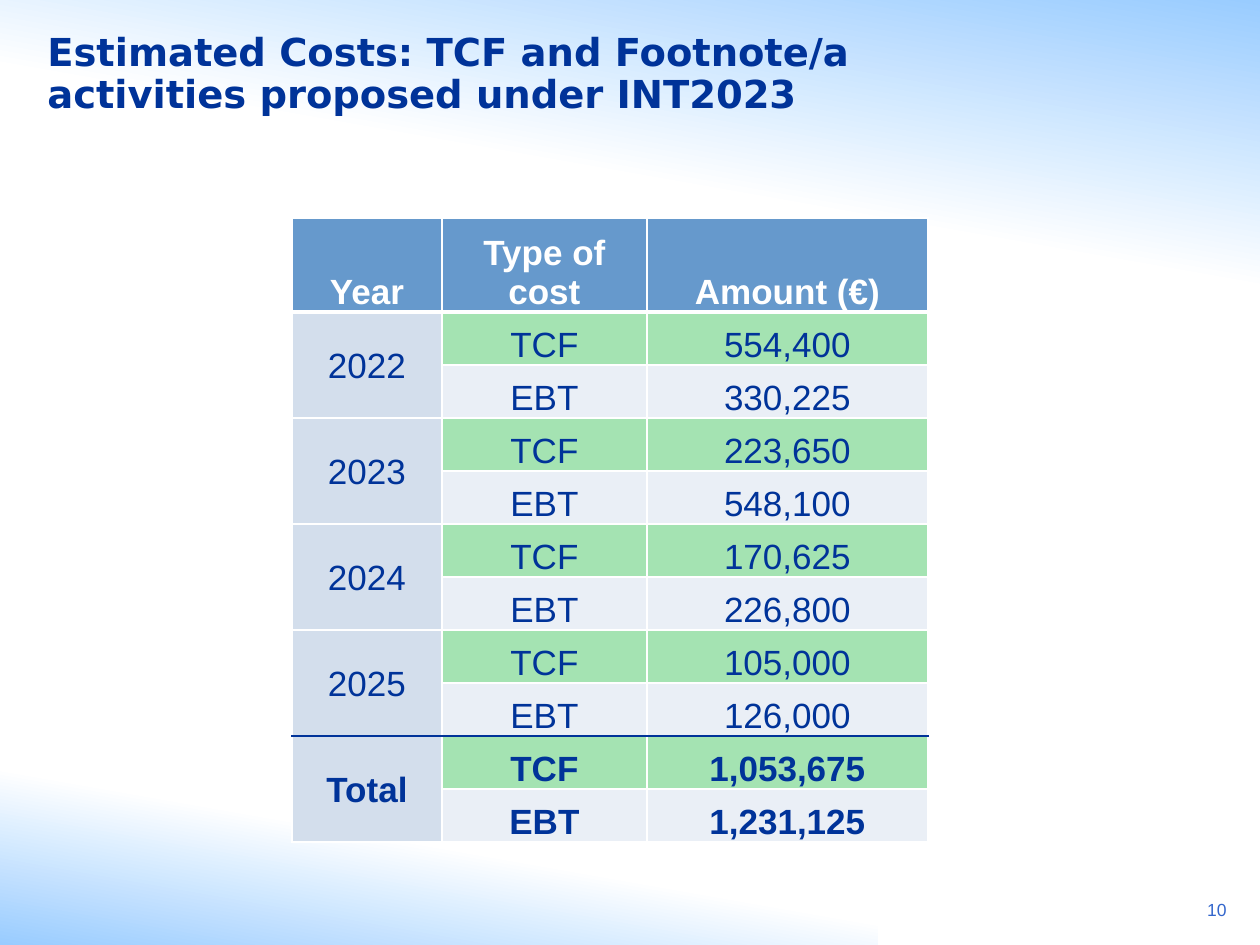
from lxml import etree
from pptx import Presentation
from pptx import util as u
from pptx.dml.color import RGBColor
from pptx.enum import shapes, text
from pptx.oxml.ns import qn

PX = 914400 / 126
WHITE = RGBColor(0xFF, 0xFF, 0xFF)
SKY = RGBColor(0x99, 0xCC, 0xFF)
NAVY = RGBColor(0x00, 0x33, 0x99)
BLUE = RGBColor(0x33, 0x66, 0xCC)
HEADER = RGBColor(0x66, 0x99, 0xCC)
YEAR = RGBColor(0xD3, 0xDE, 0xEC)
GREEN = RGBColor(0xA4, 0xE3, 0xB2)
PALE = RGBColor(0xEA, 0xEF, 0xF6)

HEADINGS = ["Year", "Type of cost", "Amount (€)"]
COSTS = [
    ("2022", "554,400", "330,225"),
    ("2023", "223,650", "548,100"),
    ("2024", "170,625", "226,800"),
    ("2025", "105,000", "126,000"),
    ("Total", "1,053,675", "1,231,125"),
]
COL_WIDTHS = [150, 205, 281]
HEADER_HEIGHT, ROW_HEIGHT = 94, 53
TOTAL_ROW = 2 * len(COSTS) - 1


def emu(*lengths):
    """Turn px lengths into EMU."""
    return [u.Emu(round(n * PX)) for n in lengths]


def style(p, font, size, color, bold, align):
    """Set the font and alignment of a paragraph."""
    p.alignment = align
    p.font.name, p.font.size = font, u.Pt(size)
    p.font.color.rgb, p.font.bold = color, bold


def add_band(s, box, angle, fade):
    """Draw a borderless band that fades from sky blue to white."""
    sp = s.shapes.add_shape(shapes.MSO_SHAPE.RECTANGLE, *emu(*box))
    sp.shadow.inherit = False
    sp.line.fill.background()
    sp.fill.gradient()
    sp.fill.gradient_angle = angle
    for stop, color, position in zip(sp.fill.gradient_stops, (SKY, WHITE), (0, fade)):
        stop.color.rgb, stop.position = color, position


def add_text(s, box, words, anchor, **font):
    """Add a wrapped text box and return its paragraph."""
    tf = s.shapes.add_textbox(*emu(*box)).text_frame
    tf.word_wrap, tf.vertical_anchor = True, anchor
    p = tf.paragraphs[0]
    p.text = words
    style(p, **font)
    return p


def add_title(s, box):
    """Write the slide title."""
    p = add_text(s, box, "Estimated Costs: TCF and Footnote/a activities proposed under INT2023",
                 text.MSO_ANCHOR.MIDDLE, font="DejaVu Sans", size=22, color=NAVY,
                 bold=True, align=text.PP_ALIGN.LEFT)
    p.line_spacing = 0.9


def add_number(s, box):
    """Write the slide number."""
    p = add_text(s, box, "10", text.MSO_ANCHOR.TOP, font="Arial", size=10,
                 color=BLUE, bold=False, align=text.PP_ALIGN.RIGHT)
    p.space_after = u.Pt(6)


def rule(row):
    """Return the colour and width of the line above a table row."""
    return {1: (WHITE, 3), TOTAL_ROW: (NAVY, 1)}.get(row, (WHITE, 1))


def set_borders(cell, above, below):
    """Draw the four borders of a cell."""
    tcPr = cell._tc.get_or_add_tcPr()
    sides = {"L": (WHITE, 1), "R": (WHITE, 1), "T": above, "B": below}
    for side, (color, width) in sides.items():
        ln = etree.SubElement(tcPr, qn(f"a:ln{side}"), w=str(u.Pt(width)))
        fill = etree.SubElement(ln, qn("a:solidFill"))
        etree.SubElement(fill, qn("a:srgbClr"), val=str(color))


def fill_cell(cell, words, fill, color, bold, anchor=text.MSO_ANCHOR.BOTTOM):
    """Write and colour one table cell."""
    cell.fill.solid()
    cell.fill.fore_color.rgb = fill
    cell.margin_left = cell.margin_right = cell.margin_top = u.Inches(0.02)
    cell.margin_bottom = 0
    cell.vertical_anchor = anchor
    p = cell.text_frame.paragraphs[0]
    p.text = words
    style(p, "Arial", 20, color, bold, text.PP_ALIGN.CENTER)


def add_costs(s, box):
    """Build the table of costs by year and type."""
    rows = 1 + 2 * len(COSTS)
    table = s.shapes.add_table(rows, len(HEADINGS), *emu(*box)).table
    table.first_row = table.horz_banding = False
    for column, width in zip(table.columns, emu(*COL_WIDTHS)):
        column.width = width
    for row, height in zip(table.rows, emu(HEADER_HEIGHT, *[ROW_HEIGHT] * (rows - 1))):
        row.height = height
    for r in range(rows):
        for c in range(len(HEADINGS)):
            span = 2 if c == 0 and r % 2 else 1
            set_borders(table.cell(r, c), rule(r), rule(r + span))
    for c, heading in enumerate(HEADINGS):
        fill_cell(table.cell(0, c), heading, HEADER, WHITE, True)
    for i, (year, *amounts) in enumerate(COSTS):
        top, bold = 1 + 2 * i, year == "Total"
        table.cell(top, 0).merge(table.cell(top + 1, 0))
        fill_cell(table.cell(top, 0), year, YEAR, NAVY, bold, text.MSO_ANCHOR.MIDDLE)
        for k, (kind, amount, fill) in enumerate(zip(("TCF", "EBT"), amounts, (GREEN, PALE))):
            fill_cell(table.cell(top + k, 1), kind, fill, NAVY, bold)
            fill_cell(table.cell(top + k, 2), amount, fill, NAVY, bold)


def main():
    """Build and save the slide."""
    prs = Presentation()
    prs.slide_width, prs.slide_height = emu(1260, 945)
    s = prs.slides.add_slide(prs.slide_layouts[6])
    add_band(s, (0, 731, 878, 214), 80, 0.48)
    add_band(s, (0, 0, 1260, 294), 260, 0.56)
    add_title(s, (35, 16, 843, 118))
    add_number(s, (1168, 893, 71, 40))
    add_costs(s, (292, 218, sum(COL_WIDTHS), HEADER_HEIGHT + 2 * len(COSTS) * ROW_HEIGHT))
    prs.save("out.pptx")


if __name__ == "__main__":
    main()
